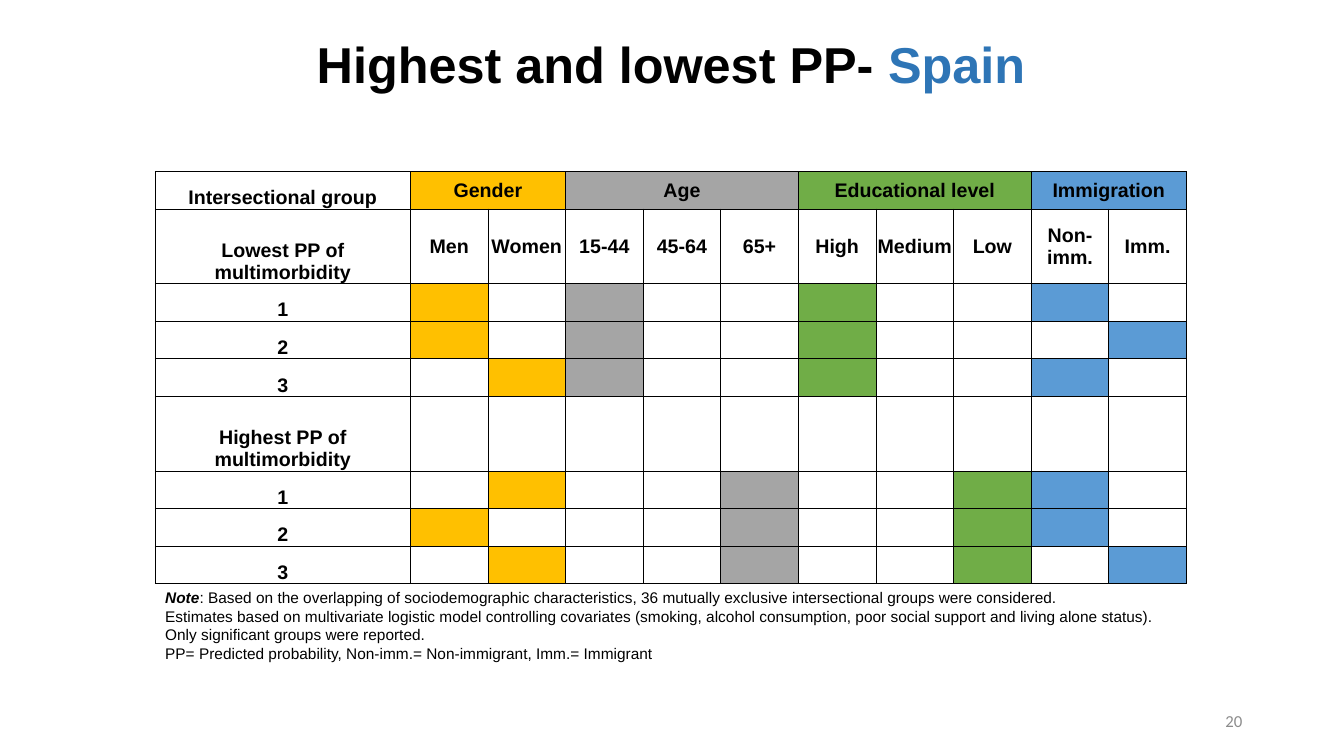
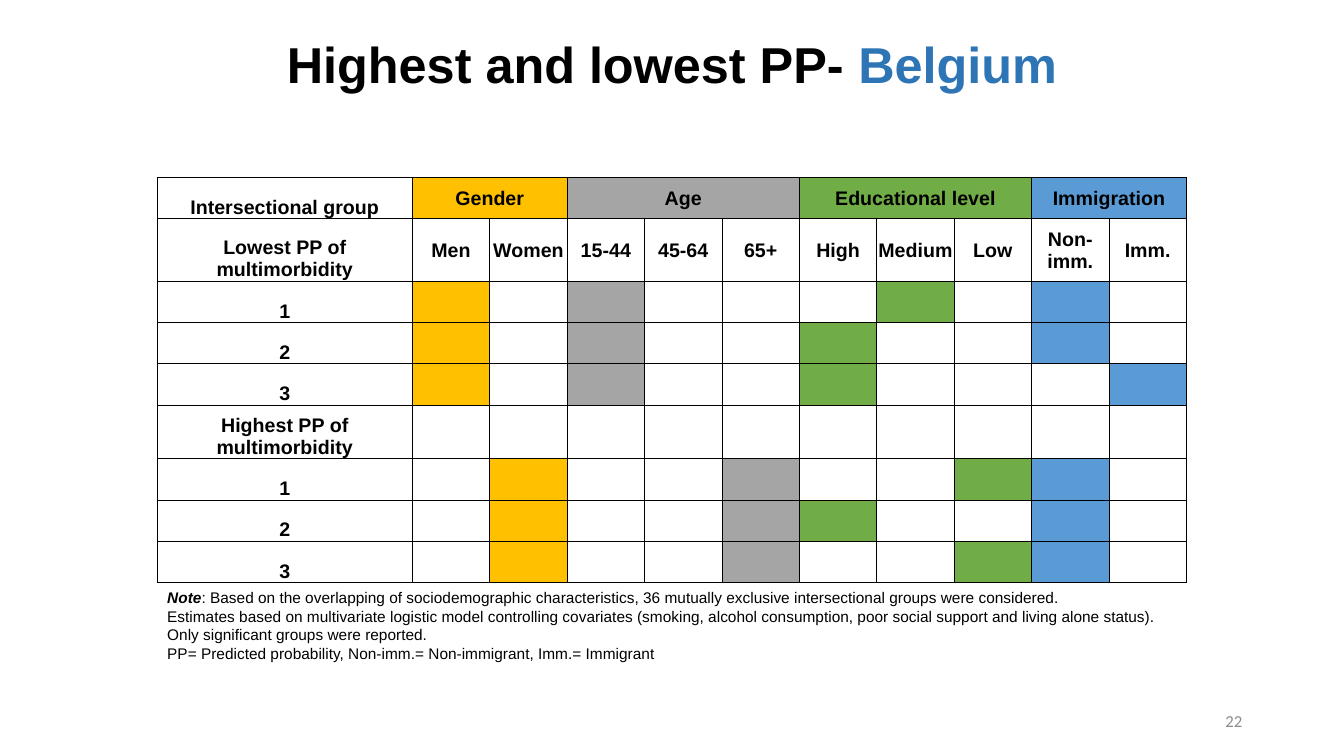
from lxml import etree
from pptx import Presentation
from pptx.dml.color import RGBColor
from pptx.enum import text as t
from pptx.oxml import ns
from pptx.util import Inches, Pt

COLORS = {
    "black": "000000", "white": "FFFFFF", "country": "2E75B6", "number": "8C8C8C",
    "gender": "FFC000", "age": "A5A5A5", "education": "70AD47", "immigration": "5B9BD5",
}

# Heading, colour and categories of each dimension
DIMENSIONS = [
    ("Gender", "gender", ["Men", "Women"]),
    ("Age", "age", ["15-44", "45-64", "65+"]),
    ("Educational level", "education", ["High", "Medium", "Low"]),
    ("Immigration", "immigration", ["Non-imm.", "Imm."]),
]
CATEGORIES = [(name, color) for _, color, names in DIMENSIONS for name in names]

NOTE_LINES = [
    ": Based on the overlapping of sociodemographic characteristics, 36 mutually exclusive "
    "intersectional groups were considered.",
    "Estimates based on multivariate logistic model controlling covariates (smoking, alcohol "
    "consumption, poor social support and living alone status).",
    "Only significant groups were reported.",
    "PP= Predicted probability, Non-imm.= Non-immigrant, Imm.= Immigrant",
]

# Each group lists its gender, age, education and immigration status
COUNTRIES = [
    dict(country="Spain", number=20, left=1.54, top=1.7, width=10.23, height=4.09,
         lowest_height=0.74, highest_height=0.74,
         lowest=["Men 15-44 High Non-imm.", "Men 15-44 High Imm.", "Women 15-44 High Non-imm."],
         highest=["Women 65+ Low Non-imm.", "Men 65+ Low Non-imm.", "Women 65+ Low Imm."]),
    dict(country="Belgium", number=22, left=1.56, top=1.76, width=10.21, height=4.02,
         lowest_height=0.62, highest_height=0.53,
         lowest=["Men 15-44 Medium Non-imm.", "Men 15-44 High Non-imm.", "Men 15-44 High Imm."],
         highest=["Women 65+ Low Non-imm.", "Women 65+ High Non-imm.", "Women 65+ Low Non-imm."]),
]


def add_text(paragraph, words, size=14, color="black", bold=False, italic=False, font="Arial"):
    run = paragraph.add_run()
    run.text = words
    run.font.size, run.font.name = Pt(size), font
    run.font.bold, run.font.italic = bold, italic
    run.font.color.rgb = RGBColor.from_string(COLORS[color])


class Deck:
    LABEL_WIDTH = 2.53

    def __init__(self):
        self.prs = Presentation()
        self.prs.slide_width, self.prs.slide_height = Inches(13.33), Inches(7.5)
        self.slide = None

    def new_slide(self):
        self.slide = self.prs.slides.add_slide(self.prs.slide_layouts[5])

    def title(self, country, left, width):
        title = self.slide.shapes.title
        title.left, title.top = Inches(left), Inches(0.1)
        title.width, title.height = Inches(width), Inches(1.13)
        frame = title.text_frame
        frame.auto_size = t.MSO_AUTO_SIZE.NONE
        frame.vertical_anchor = t.MSO_ANCHOR.MIDDLE
        heading = frame.paragraphs[0]
        heading.alignment, heading.line_spacing = t.PP_ALIGN.CENTER, 0.9
        add_text(heading, "Highest and lowest PP- ", size=36, bold=True)
        add_text(heading, country, size=36, bold=True, color="country")

    def text_frame(self, left, top, width, height):
        box = self.slide.shapes.add_textbox(
            Inches(left), Inches(top), Inches(width), Inches(height))
        box.text_frame.word_wrap = True
        return box.text_frame

    def page_number(self, number):
        frame = self.text_frame(9.42, 6.95, 3, 0.4)
        frame.vertical_anchor = t.MSO_ANCHOR.MIDDLE
        frame.paragraphs[0].alignment = t.PP_ALIGN.RIGHT
        add_text(frame.paragraphs[0], str(number), size=12, color="number", font="Calibri")

    def note(self, left, width):
        frame = self.text_frame(left, 5.79, width, 0.84)
        add_text(frame.paragraphs[0], "Note", size=11, bold=True, italic=True)
        for index, line in enumerate(NOTE_LINES):
            paragraph = frame.add_paragraph() if index else frame.paragraphs[0]
            add_text(paragraph, line, size=11)

    def cell(self, cell, words="", fill="white", anchor=t.MSO_ANCHOR.MIDDLE):
        cell.margin_left = cell.margin_right = cell.margin_top = Inches(0.01)
        cell.margin_bottom = 0
        cell.vertical_anchor = anchor
        # Thin black border on all four sides
        properties = cell._tc.get_or_add_tcPr()
        for side in ("lnL", "lnR", "lnT", "lnB"):
            line = etree.SubElement(properties, ns.qn(f"a:{side}"), w=str(Pt(0.5)))
            solid = etree.SubElement(line, ns.qn("a:solidFill"))
            etree.SubElement(solid, ns.qn("a:srgbClr"), val=COLORS["black"])
        cell.fill.solid()
        cell.fill.fore_color.rgb = RGBColor.from_string(COLORS[fill])
        if words:
            cell.text_frame.paragraphs[0].alignment = t.PP_ALIGN.CENTER
            add_text(cell.text_frame.paragraphs[0], words, bold=True)

    def group_table(self, left, top, width, height, lowest_height, highest_height,
                    lowest, highest):
        rows = [("Intersectional group", ""), ("Lowest PP of multimorbidity", "")]
        rows += [(str(rank), group) for rank, group in enumerate(lowest, 1)]
        highest_row = len(rows)
        rows += [("Highest PP of multimorbidity", "")]
        rows += [(str(rank), group) for rank, group in enumerate(highest, 1)]

        table = self.slide.shapes.add_table(
            len(rows), len(CATEGORIES) + 1,
            Inches(left), Inches(top), Inches(width), Inches(height)).table
        table.first_row = table.horz_banding = False

        # Equal category columns and equal plain rows share the remaining space
        for column in table.columns:
            column.width = Inches((width - self.LABEL_WIDTH) / len(CATEGORIES))
        table.columns[0].width = Inches(self.LABEL_WIDTH)
        for row in table.rows:
            row.height = Inches((height - lowest_height - highest_height) / (len(rows) - 2))
        table.rows[1].height = Inches(lowest_height)
        table.rows[highest_row].height = Inches(highest_height)

        # Row labels, category names and coloured marks
        for r, (label, group) in enumerate(rows):
            self.cell(table.cell(r, 0), label, anchor=t.MSO_ANCHOR.BOTTOM)
            for c, (name, color) in enumerate(CATEGORIES, 1):
                marked = r == 0 or name in group.split()
                self.cell(table.cell(r, c), name if r == 1 else "",
                          fill=color if marked else "white")

        # Merged dimension headings
        start = 1
        for heading, _, names in DIMENSIONS:
            first = table.cell(0, start)
            first.merge(table.cell(0, start + len(names) - 1))
            first.text_frame.paragraphs[0].alignment = t.PP_ALIGN.CENTER
            add_text(first.text_frame.paragraphs[0], heading, bold=True)
            start += len(names)

    def country_slide(self, country, number, left, width, **groups):
        self.new_slide()
        self.title(country, left, width)
        self.page_number(number)
        self.group_table(left=left, width=width, **groups)
        self.note(left, width)


def main():
    deck = Deck()
    for country in COUNTRIES:
        deck.country_slide(**country)
    deck.prs.save("out.pptx")


if __name__ == "__main__":
    main()
